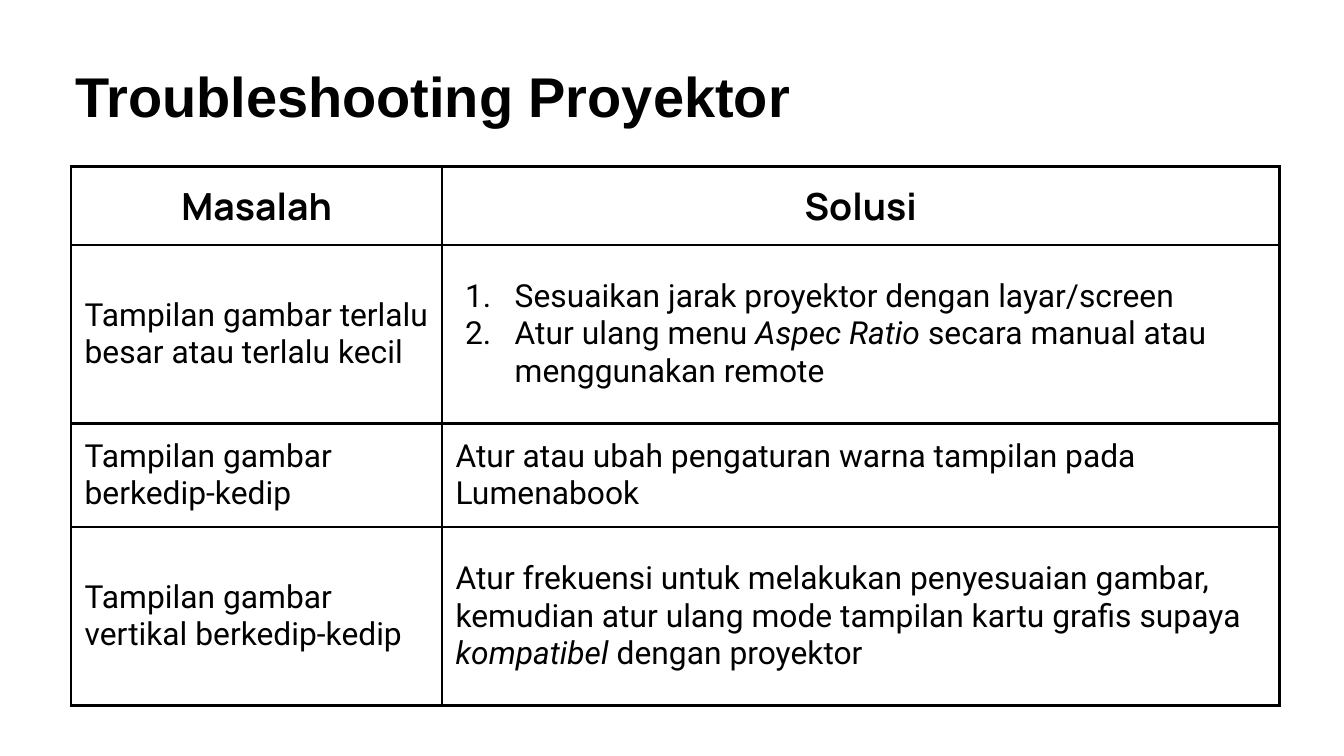
from pptx import Presentation
from pptx.dml.color import RGBColor
from pptx.enum.text import MSO_ANCHOR, MSO_AUTO_SIZE, PP_ALIGN
from pptx.oxml import parse_xml
from pptx.oxml.ns import nsdecls
from pptx.util import Inches, Pt

INK = "000000"
COLS = [2.76, 6.23]
ROWS = [0.36, 1.33, 0.77, 1.33]
HEADS = ["Masalah", "Solusi"]
FIXES = [
    ("Tampilan gambar terlalu besar atau terlalu kecil",
     ["Sesuaikan jarak proyektor dengan layar/screen",
      "Atur ulang menu *Aspec Ratio* secara manual atau menggunakan remote"]),
    ("Tampilan gambar berkedip-kedip",
     ["Atur atau ubah pengaturan warna tampilan pada Lumenabook"]),
    ("Tampilan gambar vertikal berkedip-kedip",
     ["Atur frekuensi untuk melakukan penyesuaian gambar, kemudian atur ulang "
      "mode tampilan kartu grafis supaya *kompatibel* dengan proyektor"]),
]


def paint(color, value):
    color.rgb = RGBColor.from_string(value)


def style(run, face, size, bold=False, italic=False):
    font = run.font
    font.name, font.size, font.bold, font.italic = face, Pt(size), bold, italic
    paint(font.color, INK)


def write(para, text, face, size, bold=False):
    for index, part in enumerate(text.split("*")):
        run = para.add_run()
        run.text = part
        style(run, face, size, bold, index % 2 == 1)


def number(para):
    props = para._p.get_or_add_pPr()
    props.set("marL", str(Inches(0.44)))
    props.set("indent", str(Inches(-0.37)))
    for body in (f'<a:buClr {nsdecls("a")}><a:srgbClr val="{INK}"/></a:buClr>',
                 f'<a:buAutoNum {nsdecls("a")} type="arabicPeriod"/>'):
        props.append(parse_xml(body))


def border(cell, width):
    props = cell._tc.get_or_add_tcPr()
    for index, side in enumerate("LRTB"):
        props.insert(index, parse_xml(
            f'<a:ln{side} {nsdecls("a")} w="{Pt(width)}"><a:solidFill>'
            f'<a:srgbClr val="{INK}"/></a:solidFill></a:ln{side}>'))


def inset(item):
    item.margin_left = item.margin_right = Inches(0.1)
    item.margin_top = item.margin_bottom = Inches(0.1)
    item.vertical_anchor = MSO_ANCHOR.MIDDLE


def fill(cell, lines, face, size, bold=False, align=PP_ALIGN.LEFT):
    inset(cell)
    cell.fill.background()
    border(cell, 1.5)
    frame = cell.text_frame
    for index, line in enumerate(lines):
        para = frame.add_paragraph() if index else frame.paragraphs[0]
        para.alignment = align
        if len(lines) > 1:
            number(para)
        write(para, line, face, size, bold)


def add_title(slide, left, top, width, height):
    title = slide.shapes.title
    title.left, title.top = Inches(left), Inches(top)
    title.width, title.height = Inches(width), Inches(height)
    frame = title.text_frame
    frame.text = "Troubleshooting Proyektor"
    frame.word_wrap = True
    frame.auto_size = MSO_AUTO_SIZE.NONE
    inset(frame)
    para = frame.paragraphs[0]
    para.alignment = PP_ALIGN.LEFT
    style(para.runs[0], "Arial", 30, bold=True)


def add_grid(slide, left, top):
    table = slide.shapes.add_table(
        len(ROWS), len(COLS), Inches(left), Inches(top),
        Inches(sum(COLS)), Inches(sum(ROWS))).table
    table.first_row = table.horz_banding = False
    for col, width in zip(table.columns, COLS):
        col.width = Inches(width)
    for row, height in zip(table.rows, ROWS):
        row.height = Inches(height)
    for col, head in enumerate(HEADS):
        fill(table.cell(0, col), [head], "Manrope", 20, True, PP_ALIGN.CENTER)
    for row, (issue, steps) in enumerate(FIXES, 1):
        fill(table.cell(row, 0), [issue], "Roboto", 17)
        fill(table.cell(row, 1), steps, "Roboto", 17)


def main():
    deck = Presentation()
    deck.slide_width = Inches(10)
    deck.slide_height = deck.slide_width * 9 // 16
    slide = deck.slides.add_slide(deck.slide_layouts[5])
    slide.background.fill.solid()
    paint(slide.background.fill.fore_color, "FFFFFF")
    add_title(slide, 0.46, 0.42, 8.45, 0.57)
    add_grid(slide, 0.53, 1.24)
    deck.save("out.pptx")


if __name__ == "__main__":
    main()
